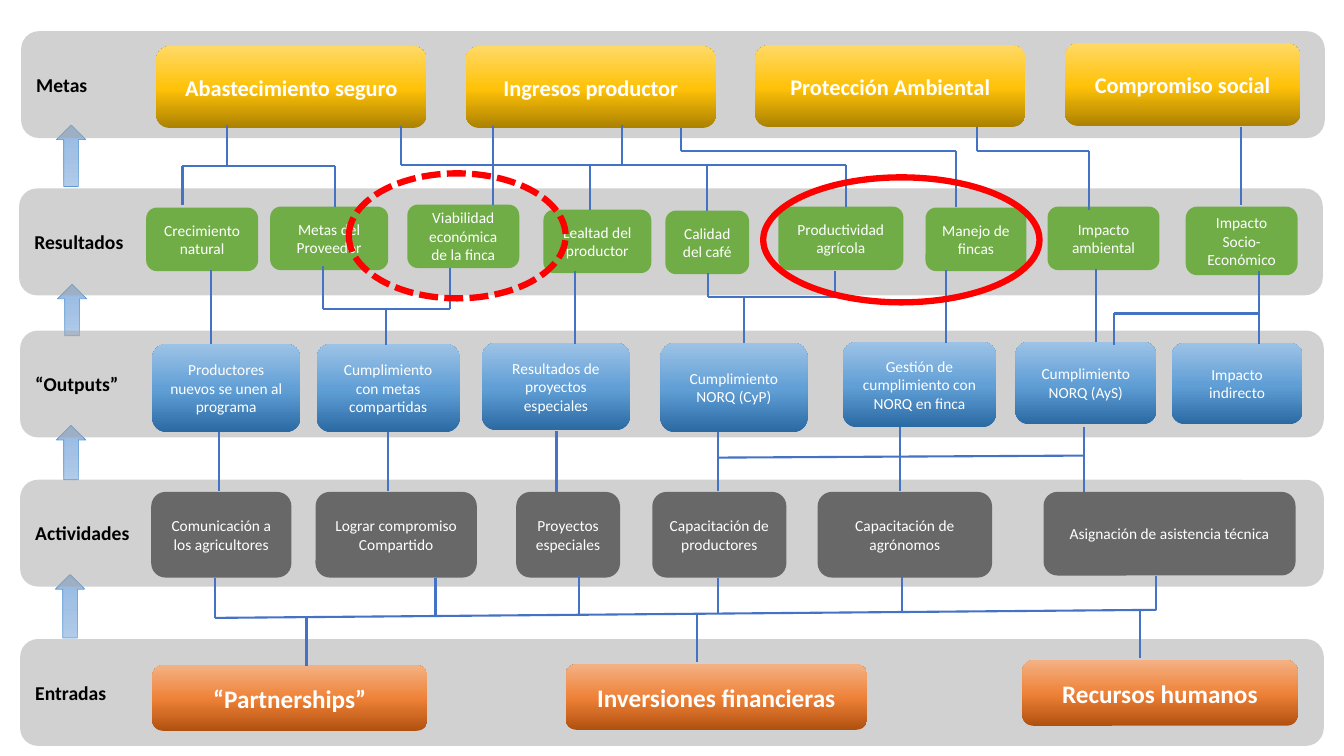
from copy import deepcopy
from dataclasses import dataclass

from lxml import etree
from pptx import Presentation
from pptx.dml.color import RGBColor
from pptx.enum.dml import MSO_LINE as Dash
from pptx.enum.shapes import MSO_CONNECTOR as Conn, MSO_SHAPE as Kind
from pptx.enum.text import MSO_ANCHOR as Anchor, PP_ALIGN as Align
from pptx.oxml.ns import qn
from pptx.util import Inches, Pt


@dataclass(frozen=True)
class Theme:
    font: str = "Calibri"
    label: int = 14
    goal: int = 16
    input: int = 18
    body: int = 11
    ink: str = "000000"
    white: str = "FFFFFF"
    band: str = "A5A5A5"
    green: str = "70AD47"
    link: str = "4472C4"
    ring: str = "FF0000"
    edge: str = "5B9BD5"
    # Gradients run from bottom to top
    gold: tuple = ((0, "AB8100"), (.48, "FFC208"), (1, "FFD966"))
    blue: tuple = ((0, "2A69A2"), (.48, "609ED6"), (1, "9DC3E6"))
    rust: tuple = ((0, "B0500F"), (.48, "EE8137"), (1, "F4B183"))
    sky: tuple = ((0, "B1CBE9"), (.5, "A3C1E5"), (1, "93B9E4"))


T = Theme()


def rgb(code):
    return RGBColor.from_string(code)


def paint(shape, look, clear=False):
    """Fill with one colour, half clear if asked, or with gradient stops."""
    fill = shape.fill
    if isinstance(look, str):
        fill.solid()
        fill.fore_color.rgb = rgb(look)
        if clear:
            tone = shape.element.spPr.find(".//" + qn("a:srgbClr"))
            etree.SubElement(tone, qn("a:alpha")).set("val", "50000")
        return
    fill.gradient()
    fill.gradient_angle = 90
    stops = shape.element.spPr.find(".//" + qn("a:gsLst"))
    stops.insert(1, deepcopy(stops[0]))
    for stop, (place, code) in zip(fill.gradient_stops, look):
        stop.position = place
        stop.color.rgb = rgb(code)


def block(slide, kind, box, look, clear=False):
    shape = slide.shapes.add_shape(kind, *map(Inches, box))
    shape.shadow.inherit = False
    shape.line.fill.background()
    paint(shape, look, clear)
    return shape


def write(shape, text, size, code, bold, align):
    frame = shape.text_frame
    frame.word_wrap = True
    frame.vertical_anchor = Anchor.MIDDLE
    frame.text = text
    for para in frame.paragraphs:
        para.alignment = align
        font = para.font
        font.name, font.size, font.bold = T.font, Pt(size), bold
        font.color.rgb = rgb(code)


def band(slide, box, name, style, items):
    """One level: grey band with its label and its boxes."""
    kind, look, clear, size, bold = style
    left, top = box[:2]
    base = block(slide, Kind.ROUNDED_RECTANGLE, box, T.band, True)
    write(base, name, T.label, T.ink, True, Align.LEFT)
    for text, x, y, wide, high in items:
        item = block(slide, kind, (left + x, top + y, wide, high), look, clear)
        write(item, text, size, T.white, bold, Align.CENTER)


def line(slide, x1, y1, x2, y2):
    wire = slide.shapes.add_connector(Conn.STRAIGHT, *map(Inches, (x1, y1, x2, y2)))
    wire.line.color.rgb = rgb(T.link)
    wire.line.width = Pt(1.5)
    etree.SubElement(wire.element.spPr, qn("a:effectLst"))


def gap(slide, top, posts, trees):
    """Links between two levels: plain posts, and ends joined by a crossbar."""
    for x, start, end in posts:
        line(slide, x, top + start, x, top + end)
    for bar, tilt, ends in trees:
        first, last = min(ends)[0], max(ends)[0]
        line(slide, first, top + bar, last, top + bar + tilt)
        for x, y in ends:
            meet = bar + tilt * (x - first) / (last - first)
            line(slide, x, top + y, x, top + meet)


def arrow(slide, box):
    shape = block(slide, Kind.UP_ARROW, box, T.sky)
    shape.line.color.rgb = rgb(T.edge)
    shape.line.width = Pt(.5)


def ring(slide, box, dash=None):
    shape = slide.shapes.add_shape(Kind.OVAL, *map(Inches, box))
    shape.shadow.inherit = False
    shape.fill.background()
    shape.line.color.rgb = rgb(T.ring)
    shape.line.width = Pt(4.5)
    if dash:
        shape.line.dash_style = dash


ROUND = Kind.ROUNDED_RECTANGLE
GOAL = (ROUND, T.gold, False, T.goal, True)
RESULT = (ROUND, T.green, False, T.body, False)
OUTPUT = (ROUND, T.blue, False, T.body, False)
ACTION = (ROUND, T.ink, True, T.body, False)
INPUT = (Kind.FLOWCHART_ALTERNATE_PROCESS, T.rust, False, T.input, True)

# Left and top of each band, label, style, boxes (text, x, y, width, height)
BANDS = [
    (.21, .31, "Metas", GOAL, [
        ("Abastecimiento seguro", 1.34, .15, 2.68, .81),
        ("Ingresos productor", 4.41, .15, 2.48, .81),
        ("Protección Ambiental", 7.28, .14, 2.68, .81),
        ("Compromiso social", 10.35, .12, 2.34, .82)]),
    (.19, 1.87, "Resultados", RESULT, [
        ("Crecimiento natural", 1.26, .19, 1.11, .63),
        ("Metas del Proveedor", 2.49, .18, 1.17, .63),
        ("Viabilidad económica de la finca", 3.85, .16, 1.11, .63),
        ("Lealtad del productor", 5.2, .21, 1.07, .63),
        ("Calidad del café", 6.41, .22, .83, .63),
        ("Productividad agrícola", 7.53, .18, 1.24, .63),
        ("Manejo de fincas", 8.99, .19, 1, .63),
        ("Impacto ambiental", 10.2, .18, 1.11, .63),
        ("Impacto Socio-Económico", 11.57, .18, 1.11, .68)]),
    (.2, 3.28, "“Outputs”", OUTPUT, [
        ("Productores nuevos se unen al programa", 1.31, .13, 1.47, .88),
        ("Cumplimiento con metas compartidas", 2.94, .13, 1.42, .88),
        ("Resultados de proyectos especiales", 4.58, .12, 1.47, .87),
        ("Cumplimiento\nNORQ (CyP)", 6.35, .12, 1.46, .89),
        ("Gestión de cumplimiento con NORQ en finca", 8.16, .11, 1.52, .85),
        ("Cumplimiento\nNORQ (AyS)", 9.87, .11, 1.4, .82),
        ("Impacto indirecto", 11.42, .12, 1.3, .81)]),
    (.2, 4.76, "Actividades", ACTION, [
        ("Comunicación a los agricultores", 1.3, .12, 1.39, .85),
        ("Lograr compromiso Compartido", 2.93, .12, 1.6, .85),
        ("Proyectos especiales", 4.92, .12, 1.03, .85),
        ("Capacitación de productores", 6.27, .12, 1.33, .85),
        ("Capacitación de agrónomos", 7.91, .12, 1.73, .85),
        ("Asignación de asistencia técnica", 10.15, .12, 2.5, .83)]),
    (.2, 6.34, "Entradas", INPUT, [
        ("“Partnerships”", 1.31, .26, 2.73, .65),
        ("Inversiones financieras", 5.41, .25, 2.99, .65),
        ("Recursos humanos", 9.94, .21, 2.73, .65)]),
]

# Top, posts (x, start, end), trees (bar, tilt, ends)
GAPS = [
    (1.24, [(12.31, .02, .79)], [
        (.41, 0, [(1.81, .79), (2.25, 0), (3.32, .81)]),
        (.4, 0, [(3.98, .01), (4.89, .01), (4.89, .79), (5.85, .84),
                 (6.17, 0), (7.01, .85), (8.39, .81)]),
        (.26, 0, [(6.75, .03), (9.48, .81)]),
        (.26, 0, [(9.69, .02), (10.8, .84)])]),
    (2.64, [(2.09, .04, .77), (5.7, .05, .77), (9.38, .04, .76),
            (10.87, .03, .75)], [
        (.43, 0, [(3.2, 0), (3.83, .78), (4.46, .02)]),
        (.31, 0, [(7.02, .07), (7.38, .76), (8.28, .05)]),
        (.47, 0, [(11.05, .78), (12.49, .05), (12.49, .77)])]),
    (4.24, [(2.17, .05, .63), (3.85, .05, .63), (5.52, .04, .64)], [
        (.3, -.02, [(7.12, .05), (7.12, .63), (8.93, 0), (8.93, .63),
                    (10.75, 0), (10.75, .64)])]),
    (5.71, [], [
        (.42, -.08, [(2.13, .02), (3.04, .9), (4.32, .02), (5.74, 0),
                     (6.91, .86), (7.12, .02), (8.95, .01), (11.31, .82),
                     (11.47, 0)])]),
]

ARROWS = [(.56, 1.24, .61), (.57, 2.82, .51), (.56, 4.22, .54), (.55, 5.7, .63)]


def main():
    deck = Presentation()
    deck.slide_width, deck.slide_height = Inches(13.33), Inches(7.5)
    slide = deck.slides.add_slide(deck.slide_layouts[6])
    for x, y, high in ARROWS:
        arrow(slide, (x, y, .29, high))
    for x, y, name, style, items in BANDS:
        band(slide, (x, y, 12.93, 1.06), name, style, items)
    for top, posts, trees in GAPS:
        gap(slide, top, posts, trees)
    # Highlight rings
    ring(slide, (3.46, 1.72, 2.15, 1.24), Dash.SQUARE_DOT)
    ring(slide, (7.57, 1.76, 2.74, 1.24))
    deck.save("out.pptx")


if __name__ == "__main__":
    main()
